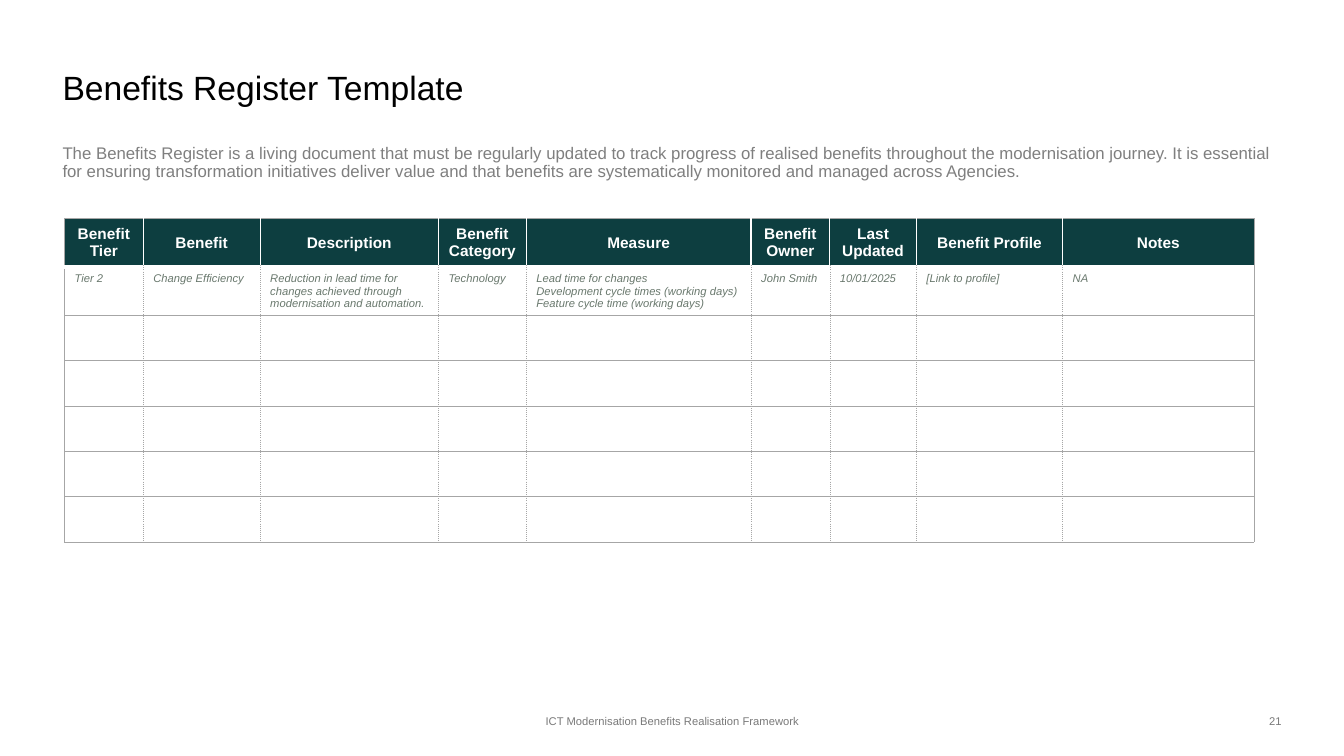
from lxml.etree import SubElement
from pptx import Presentation
from pptx.dml.color import RGBColor
from pptx.enum.text import MSO_ANCHOR, MSO_AUTO_SIZE, PP_ALIGN
from pptx.oxml import parse_xml
from pptx.oxml.ns import nsdecls, qn
from pptx.util import Inches, Pt

# Content
TITLE = "Benefits Register Template"
INTRO = ("The Benefits Register is a living document that must be regularly updated to track "
         "progress of realised benefits throughout the modernisation journey. It is essential "
         "for ensuring transformation initiatives deliver value and that benefits are "
         "systematically monitored and managed across Agencies.")
COLUMNS = [  # heading, width, example entry
    ("Benefit Tier", 0.78, ["Tier 2"]),
    ("Benefit", 1.16, ["Change Efficiency"]),
    ("Description", 1.77, ["Reduction in lead time for changes achieved through "
                           "modernisation and automation."]),
    ("Benefit Category", 0.87, ["Technology"]),
    ("Measure", 2.23, ["Lead time for changes", "Development cycle times (working days)",
                       "Feature cycle time (working days)"]),
    ("Benefit Owner", 0.78, ["John Smith"]),
    ("Last Updated", 0.86, ["10/01/2025"]),
    ("Benefit Profile", 1.45, ["[Link to profile]"]),
    ("Notes", 1.9, ["NA"]),
]
EMPTY_ROWS = 5
FOOTER = "ICT Modernisation Benefits Realisation Framework"
PAGE = "21"

# Style
FONT = "Arial"
BLACK = RGBColor(0x00, 0x00, 0x00)
WHITE = RGBColor(0xFF, 0xFF, 0xFF)
GREY = RGBColor(0x7F, 0x7F, 0x7F)
FOOT_GREY = RGBColor(0x79, 0x79, 0x79)
ENTRY_GREY = RGBColor(0x69, 0x78, 0x6D)
TEAL = RGBColor(0x0D, 0x3E, 0x40)
RULE = RGBColor(0xA6, 0xA6, 0xA6)
SOLID, DOTTED = (RULE, 0.5, "solid"), (RULE, 0.25, "dot")
WHITE_THIN, WHITE_THICK = (WHITE, 1, "solid"), (WHITE, 3, "solid")

# Grid
LEFT, WIDTH = 0.52, 12.28
TABLE_LEFT, TABLE_TOP = 0.64, 2.17
HEAD_H, ROW_H = 0.48, 0.45
FOOT_TOP, FOOT_H = 6.95, 0.4


def write(tf, lines, size, color, align=PP_ALIGN.LEFT, spacing=None, bold=False, italic=False):
    for i, line in enumerate(lines):
        p = tf.add_paragraph() if i else tf.paragraphs[0]
        p.alignment = align
        p.space_before = Pt(0)
        if spacing:
            p.line_spacing = spacing
        r = p.add_run()
        r.text = line
        f = r.font
        f.name, f.size, f.bold, f.italic = FONT, Pt(size), bold, italic
        f.color.rgb = color


def place(sp, left, top, width, height, anchor):
    sp.left, sp.top, sp.width, sp.height = map(Inches, (left, top, width, height))
    tf = sp.text_frame
    tf.word_wrap = True
    tf.auto_size = MSO_AUTO_SIZE.NONE
    tf.vertical_anchor = anchor
    return tf


def set_borders(cell, left, right, top, bottom):
    tcPr = cell._tc.get_or_add_tcPr()
    for i, (side, line) in enumerate(zip("LRTB", (left, right, top, bottom))):
        color, width, dash = line
        tcPr.insert(i, parse_xml(
            f'<a:ln{side} {nsdecls("a")} w="{Pt(width)}"><a:solidFill><a:srgbClr val="{color}"/>'
            f'</a:solidFill><a:prstDash val="{dash}"/></a:ln{side}>'))


prs = Presentation()
prs.slide_width, prs.slide_height = Inches(13.33), Inches(7.5)
s = prs.slides.add_slide(prs.slide_layouts[1])

# Title and introduction
title, body = s.placeholders
write(place(title, LEFT, 0.48, WIDTH, 0.82, MSO_ANCHOR.MIDDLE), [TITLE], 24, BLACK, spacing=0.9)
tf = place(body, LEFT, 1.39, WIDTH, 0.58, MSO_ANCHOR.TOP)
pPr = tf.paragraphs[0]._p.get_or_add_pPr()
pPr.set("marL", "0")
pPr.set("indent", "0")
SubElement(pPr, qn("a:buNone"))
write(tf, [INTRO], 12, GREY, spacing=0.9)

# Register table
heights = [HEAD_H] + [ROW_H] * (EMPTY_ROWS + 1)
last = len(COLUMNS) - 1
table = s.shapes.add_table(
    len(heights), len(COLUMNS), Inches(TABLE_LEFT), Inches(TABLE_TOP),
    Inches(sum(width for _, width, _ in COLUMNS)), Inches(sum(heights))).table
table.first_row = table.horz_banding = False
for row, height in zip(table.rows, heights):
    row.height = Inches(height)
for c, (heading, width, entry) in enumerate(COLUMNS):
    table.columns[c].width = Inches(width)
    for r in range(len(heights)):
        cell = table.cell(r, c)
        cell.fill.solid()
        cell.fill.fore_color.rgb = WHITE if r else TEAL
        inner = DOTTED if r else WHITE_THIN
        set_borders(cell,
                    left=inner if c else SOLID,
                    right=inner if c < last else SOLID,
                    top=WHITE_THIN if r == 1 else SOLID,
                    bottom=SOLID if r else WHITE_THICK)
        if r == 0:
            cell.vertical_anchor = MSO_ANCHOR.MIDDLE
            write(cell.text_frame, [heading], 11, WHITE, PP_ALIGN.CENTER, bold=True)
        elif r == 1:
            write(cell.text_frame, entry, 8, ENTRY_GREY, italic=True)

# Footer and page number
for text, left, width, align in ((FOOTER, 4.42, 4.5, PP_ALIGN.CENTER),
                                 (PAGE, 9.81, 3, PP_ALIGN.RIGHT)):
    box = s.shapes.add_textbox(0, 0, 0, 0)
    write(place(box, left, FOOT_TOP, width, FOOT_H, MSO_ANCHOR.MIDDLE),
          [text], 8, FOOT_GREY, align)

prs.save("out.pptx")
